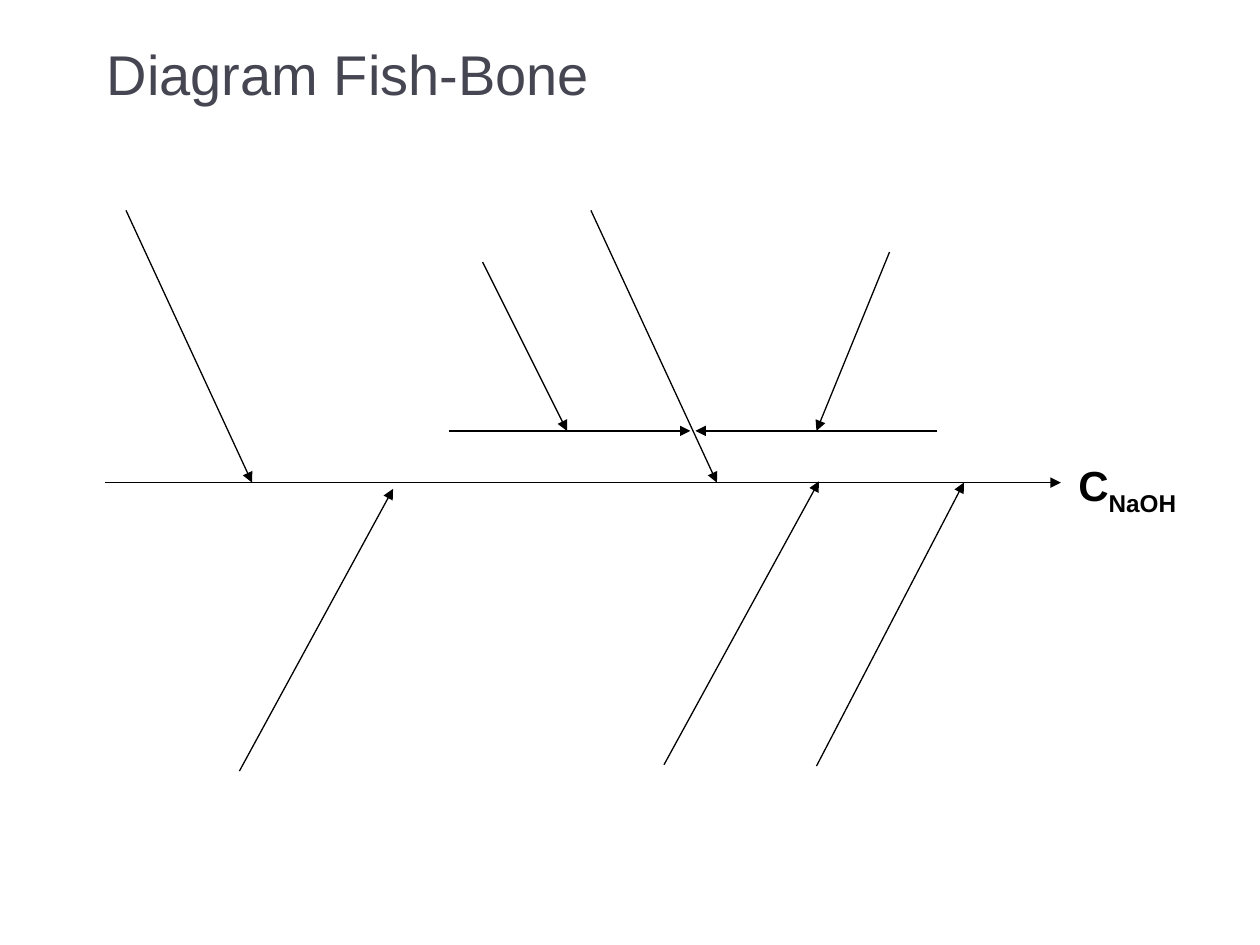
"""Build a fish-bone diagram slide for the concentration of NaOH."""
from dataclasses import dataclass
from typing import NamedTuple

from lxml import etree
from pptx import Presentation
from pptx import util as u
from pptx.dml.color import RGBColor
from pptx.enum import shapes, text
from pptx.oxml.ns import qn


@dataclass(frozen=True)
class Theme:
    font: str = "Arial"
    title_color: str = "464653"
    ink: str = "000000"
    title_size: float = 32
    label_size: float = 24
    line_width: float = 0.75


class Arrow(NamedTuple):
    x1: float
    y1: float
    x2: float
    y2: float


class Run(NamedTuple):
    text: str
    size: float
    color: str
    bold: bool = False
    baseline: int = 0


class Label(NamedTuple):
    left: float
    top: float
    width: float
    height: float
    anchor: text.MSO_ANCHOR
    runs: tuple[Run, ...]


THEME = Theme()
SPINE_Y = 3.83
BRANCH_Y = 3.42

LABELS = (
    Label(0.75, 0.12, 8.5, 0.92, text.MSO_ANCHOR.MIDDLE,
          (Run("Diagram Fish-Bone", THEME.title_size, THEME.title_color),)),
    Label(8.46, 3.6, 1.42, 0.5, text.MSO_ANCHOR.TOP,
          (Run("C", THEME.label_size, THEME.ink, True),
           Run("NaOH", THEME.label_size, THEME.ink, True, -25000))),
)

ARROWS = (
    Arrow(0.83, SPINE_Y, 8.42, SPINE_Y),
    Arrow(1, 1.67, 2, SPINE_Y),
    Arrow(6.48, 6.08, 7.65, SPINE_Y),
    Arrow(4.69, 1.67, 5.69, SPINE_Y),
    Arrow(3.56, BRANCH_Y, 5.48, BRANCH_Y),
    Arrow(7.44, BRANCH_Y, 5.52, BRANCH_Y),
    Arrow(3.83, 2.08, 4.5, BRANCH_Y),
    Arrow(7.06, 2, 6.48, BRANCH_Y),
    Arrow(5.27, 6.07, 6.5, 3.82),
    Arrow(1.9, 6.12, 3.12, 3.88),
)


def draw_label(s, label: Label) -> None:
    sp = s.shapes.add_textbox(u.Inches(label.left), u.Inches(label.top),
                              u.Inches(label.width), u.Inches(label.height))
    tf = sp.text_frame
    tf.word_wrap = True
    tf.vertical_anchor = label.anchor
    p = tf.paragraphs[0]
    for run in label.runs:
        r = p.add_run()
        r.text = run.text
        r.font.name = THEME.font
        r.font.size = u.Pt(run.size)
        r.font.bold = run.bold
        r.font.color.rgb = RGBColor.from_string(run.color)
        if run.baseline:
            r._r.get_or_add_rPr().set("baseline", str(run.baseline))


def draw_arrow(s, arrow: Arrow) -> None:
    cx = s.shapes.add_connector(shapes.MSO_CONNECTOR.STRAIGHT,
                                *(u.Inches(v) for v in arrow))
    cx.line.width = u.Pt(THEME.line_width)
    cx.line.color.rgb = RGBColor.from_string(THEME.ink)
    etree.SubElement(cx.line._get_or_add_ln(), qn("a:tailEnd"), type="triangle")
    etree.SubElement(cx._element.spPr, qn("a:effectLst"))


def main() -> None:
    prs = Presentation()
    prs.slide_width, prs.slide_height = u.Inches(10), u.Inches(7.5)
    s = prs.slides.add_slide(prs.slide_layouts[6])
    for label in LABELS:
        draw_label(s, label)
    for arrow in ARROWS:
        draw_arrow(s, arrow)
    prs.save("out.pptx")


if __name__ == "__main__":
    main()
